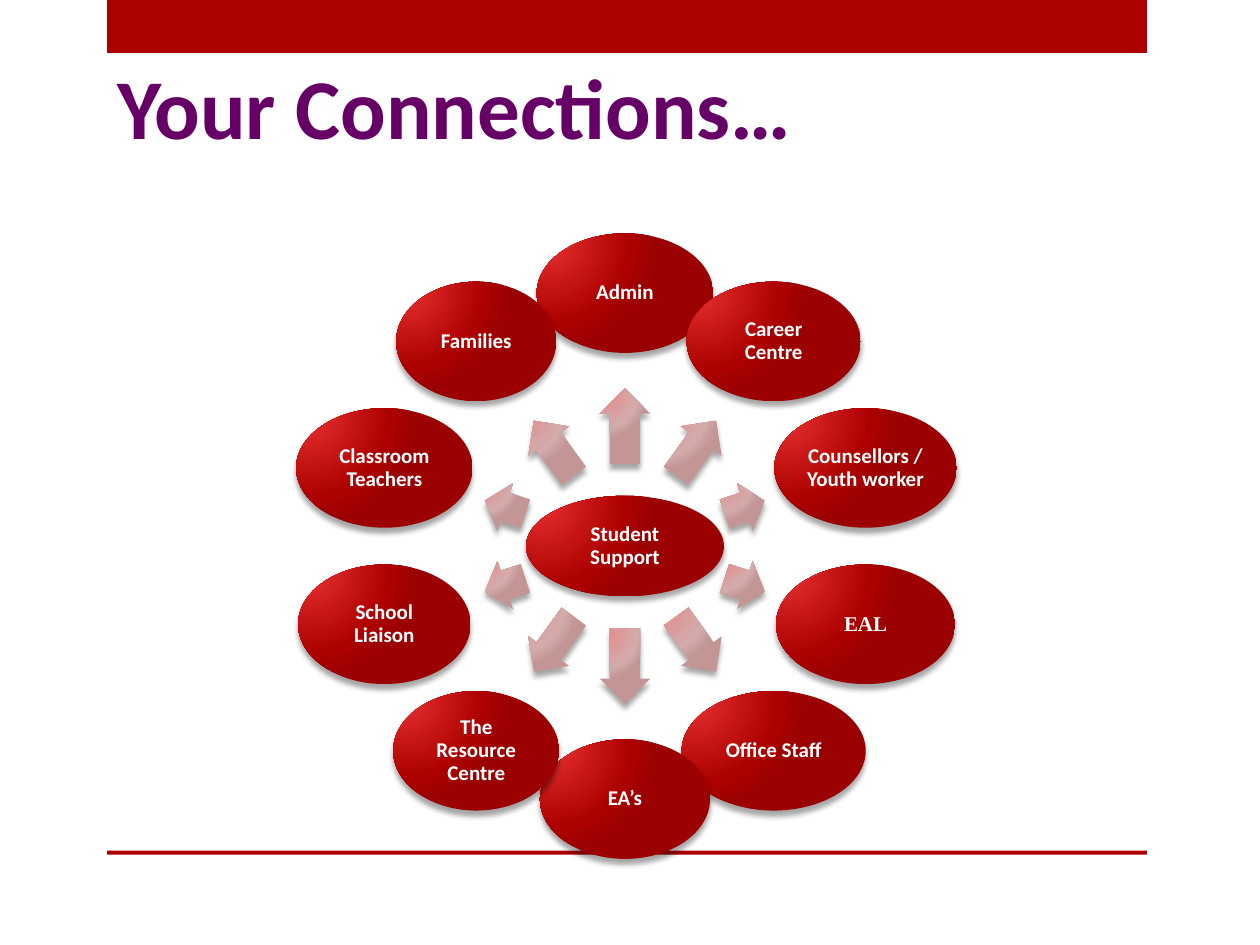
import math

import lxml.etree
import pptx
import pptx.dml.color
import pptx.enum.shapes
import pptx.enum.text
import pptx.oxml
import pptx.oxml.ns
import pptx.util

Cm = pptx.util.Cm
SHAPES = pptx.enum.shapes.MSO_SHAPE
ANCHOR = pptx.enum.text.MSO_ANCHOR
ALIGN = pptx.enum.text.PP_ALIGN

RED = "AD0101"
PURPLE = "660066"
WHITE = "FFFFFF"
OVAL_GRADIENT = ("E62F2F", RED, "9C0101")
ARROW_GRADIENT = ("E68989", "D3ABAB", "C39595")

CENTRE_X, CENTRE_Y = 12.6, 11.01
RING_RADIUS = 5.1
OVAL_HEIGHT = 2.41
ARROW_WIDTH = 1.02

# Clockwise from the top: label, oval width, font
CONNECTIONS = [
    ("Admin", 3.56, "Calibri"),
    ("Career Centre", 3.51, "Calibri"),
    ("Counsellors / Youth worker", 3.68, "Calibri"),
    ("EAL", 3.61, "Times New Roman"),
    ("Office Staff", 3.71, "Calibri"),
    ("EA’s", 3.43, "Calibri"),
    ("The Resource Centre", 3.35, "Calibri"),
    ("School Liaison", 3.48, "Calibri"),
    ("Classroom Teachers", 3.56, "Calibri"),
    ("Families", 3.23, "Calibri"),
]
# Length and distance from the centre, repeating every half turn
ARROWS = [(1.52, 2.42), (1.37, 2.44), (0.86, 2.54), (0.86, 2.54), (1.37, 2.44)]


def colour(value):
    return pptx.dml.color.RGBColor.from_string(value)


def set_attributes(target, values):
    for name, value in values.items():
        setattr(target, name, value)


def write_text(shape, text, frame_format, alignment, spacing, font_format, font_colour):
    frame = shape.text_frame
    frame.text = text
    set_attributes(frame, frame_format)
    paragraph = frame.paragraphs[0]
    set_attributes(paragraph, {"alignment": alignment, "line_spacing": spacing})
    font = paragraph.runs[0].font
    set_attributes(font, font_format)
    font.color.rgb = colour(font_colour)


def add_bar(slide, top, height):
    bar = slide.shapes.add_shape(SHAPES.RECTANGLE, Cm(2.16), Cm(top), Cm(20.96), Cm(height))
    bar.shadow.inherit = False
    bar.fill.solid()
    bar.fill.fore_color.rgb = colour(RED)
    bar.line.fill.background()


def add_glossy_shape(slide, kind, x, y, width, height, gradient):
    """Add a shape centred on x, y with a radial gradient and a soft shadow below."""
    shape = slide.shapes.add_shape(
        kind, Cm(x - width / 2), Cm(y - height / 2), Cm(width), Cm(height))
    shape.line.fill.background()
    shape.shadow.inherit = False
    namespace = pptx.oxml.ns.nsdecls("a")
    stops = "".join(
        f'<a:gs pos="{position}"><a:srgbClr val="{value}"/></a:gs>'
        for position, value in zip((0, 76000, 100000), gradient))
    properties = shape._element.spPr
    geometry = properties.find(pptx.oxml.ns.qn("a:prstGeom"))
    geometry.addnext(pptx.oxml.parse_xml(
        f'<a:gradFill {namespace} rotWithShape="0"><a:gsLst>{stops}</a:gsLst>'
        '<a:path path="circle"><a:fillToRect l="15000" t="15000" r="100000" b="100000"/>'
        '</a:path></a:gradFill>'))
    properties.find(pptx.oxml.ns.qn("a:effectLst")).append(pptx.oxml.parse_xml(
        f'<a:outerShdw {namespace} blurRad="38100" dist="38100" dir="5400000" '
        'rotWithShape="0"><a:srgbClr val="000000"><a:alpha val="35000"/></a:srgbClr>'
        '</a:outerShdw>'))
    return shape


def add_oval(slide, text, x, y, width, height, font_name):
    oval = add_glossy_shape(slide, SHAPES.OVAL, x, y, width, height, OVAL_GRADIENT)
    margins = {f"margin_{side}": Cm(0.04) for side in ("left", "right", "top", "bottom")}
    write_text(
        oval, text,
        {"word_wrap": True, "vertical_anchor": ANCHOR.MIDDLE, **margins},
        ALIGN.CENTER, 0.9,
        {"name": font_name, "size": pptx.util.Pt(12), "bold": True}, WHITE)


def point_on_ring(angle, radius):
    """Return the point at a clockwise angle in degrees, measured from the right."""
    radians = math.radians(angle)
    return CENTRE_X + radius * math.cos(radians), CENTRE_Y + radius * math.sin(radians)


def add_arrow(slide, angle, length, distance):
    x, y = point_on_ring(angle, distance)
    arrow = add_glossy_shape(
        slide, SHAPES.RIGHT_ARROW, x, y, length, ARROW_WIDTH, ARROW_GRADIENT)
    arrow.adjustments[0] = 0.6
    arrow.adjustments[1] = 0.5
    arrow.rotation = angle % 360


def add_title(slide, text):
    title = slide.shapes.title
    set_attributes(title, {
        "left": Cm(2.11), "top": Cm(1.17), "width": Cm(19.25), "height": Cm(2.11)})
    write_text(
        title, text,
        {"word_wrap": True, "vertical_anchor": ANCHOR.BOTTOM,
         "auto_size": pptx.enum.text.MSO_AUTO_SIZE.NONE},
        ALIGN.LEFT, 1.0,
        {"name": "Calibri", "size": pptx.util.Pt(48.6), "bold": True}, PURPLE)


def add_connections(slide):
    add_oval(slide, "Student Support", CENTRE_X, CENTRE_Y, 3.99, 2.03, "Calibri")
    for index, (label, width, font_name) in enumerate(CONNECTIONS):
        angle = 360 / len(CONNECTIONS) * index - 90
        add_arrow(slide, angle, *ARROWS[index % len(ARROWS)])
        x, y = point_on_ring(angle, RING_RADIUS)
        add_oval(slide, label, x, y, width, OVAL_HEIGHT, font_name)


def main():
    presentation = pptx.Presentation()
    presentation.slide_width = Cm(25.4)
    presentation.slide_height = Cm(19.05)
    slide = presentation.slides.add_slide(presentation.slide_layouts[5])
    add_bar(slide, 0, 1.07)
    add_bar(slide, 17.15, 0.08)
    add_title(slide, "Your Connections…")
    add_connections(slide)
    presentation.save("out.pptx")


if __name__ == "__main__":
    main()
